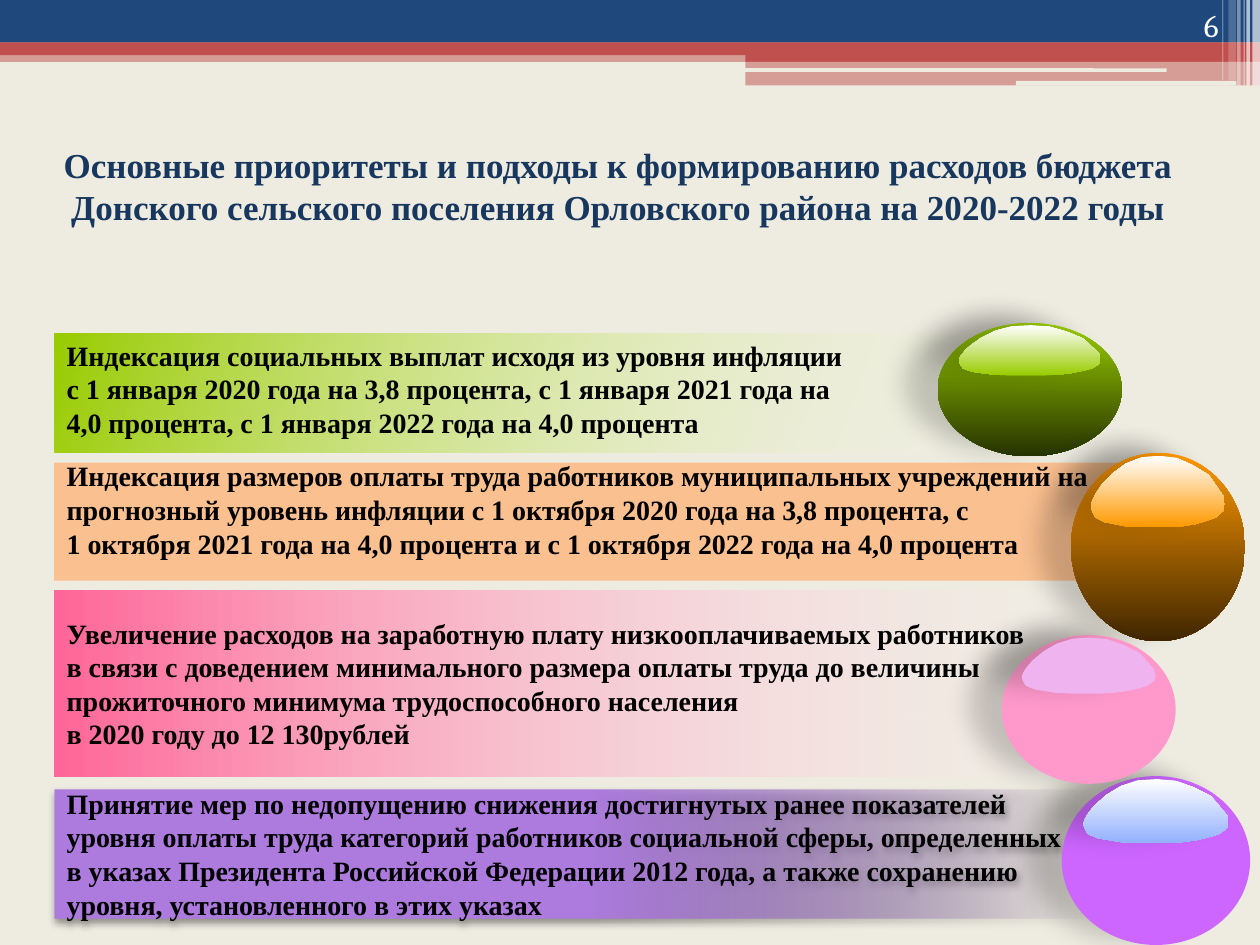
from dataclasses import dataclass
from typing import Optional

from lxml import etree
from pptx import Presentation
from pptx.dml.color import RGBColor
from pptx.enum.shapes import MSO_SHAPE
from pptx.enum.text import MSO_ANCHOR, MSO_AUTO_SIZE, PP_ALIGN
from pptx.oxml.ns import qn
from pptx.util import Pt

RECT, ROUND, OVAL = MSO_SHAPE.RECTANGLE, MSO_SHAPE.ROUNDED_RECTANGLE, MSO_SHAPE.OVAL
LEFT, CENTER, RIGHT = PP_ALIGN.LEFT, PP_ALIGN.CENTER, PP_ALIGN.RIGHT
TOP, MIDDLE, BOTTOM = MSO_ANCHOR.TOP, MSO_ANCHOR.MIDDLE, MSO_ANCHOR.BOTTOM
FIT, FIXED = MSO_AUTO_SIZE.SHAPE_TO_FIT_TEXT, MSO_AUTO_SIZE.NONE
SERIF = "Times New Roman"
NAVY, RED, CREAM, WHITE, BLACK = "1F497D", "C0504D", "EEECE1", "FFFFFF", "000000"
GLOSS = [
    (.99, .57), (1, .68), (.99, .77), (.94, .86), (.87, .91), (.78, .96), (.68, .99),
    (.6, 1), (.36, 1), (.26, .99), (.18, .96), (.1, .93), (.03, .86), (.01, .78),
    (0, .71), (.01, .63), (.04, .52), (.08, .41), (.16, .25), (.26, .11), (.38, .02),
    (.51, 0), (.64, .03), (.76, .13), (.88, .27), (.95, .46),
]


@dataclass
class Box:
    x: float
    y: float
    w: float
    h: float


@dataclass
class Stop:
    pos: int
    color: str
    alpha: int = 100


@dataclass
class Fill:
    stops: list[Stop]
    angle: float = 0


@dataclass
class Shadow:
    alpha: int
    blur: float
    dist: float
    angle: int


@dataclass
class Ball:
    box: Box
    fill: Fill
    gloss: Fill


@dataclass
class Style:
    size: int = 16
    color: str = BLACK
    font: str = SERIF
    bold: bool = True
    align: PP_ALIGN = LEFT
    anchor: MSO_ANCHOR = TOP
    top: float = 3.6
    grow: bool = False


def rgb(color: str) -> RGBColor:
    """Turn a hex string into a colour."""
    return RGBColor.from_string(color)


def solid(color: str, alpha: int = 100) -> Fill:
    """Describe a plain fill."""
    return Fill([Stop(0, color, alpha)])


def fade(first: str, last: str, angle: float = 90, alpha: int = 100) -> Fill:
    """Describe a two-colour gradient whose first colour may be transparent."""
    return Fill([Stop(0, first, alpha), Stop(100, last)], angle)


def add_color(parent, color: str, alpha: int) -> None:
    """Append a colour element with its opacity."""
    clr = etree.SubElement(parent, qn("a:srgbClr"), val=color)
    if alpha < 100:
        etree.SubElement(clr, qn("a:alpha"), val=str(alpha * 1000))


def paint(sp, fill: Fill, shadow: Optional[Shadow] = None) -> None:
    """Set fill and shadow and remove the line."""
    sp.line.fill.background()
    sp.shadow.inherit = False
    sp_pr = sp._element.spPr
    if len(fill.stops) == 1:
        sp.fill.solid()
        node = sp_pr.find(qn("a:solidFill"))
        node.clear()
        add_color(node, fill.stops[0].color, fill.stops[0].alpha)
    else:
        sp.fill.gradient()
        sp.fill.gradient_angle = (360 - fill.angle) % 360
        node = sp_pr.find(qn("a:gradFill")).find(qn("a:gsLst"))
        node.clear()
        for stop in fill.stops:
            gs = etree.SubElement(node, qn("a:gs"), pos=str(stop.pos * 1000))
            add_color(gs, stop.color, stop.alpha)
    if shadow:
        node = etree.SubElement(
            sp_pr.find(qn("a:effectLst")), qn("a:outerShdw"),
            blurRad=str(Pt(shadow.blur)), dist=str(Pt(shadow.dist)),
            dir=str(shadow.angle * 60000), algn="ctr", rotWithShape="0")
        add_color(node, BLACK, shadow.alpha)


def add_shape(s, kind: MSO_SHAPE, box: Box, fill: Fill, shadow: Optional[Shadow] = None):
    """Draw a preset shape."""
    sp = s.shapes.add_shape(kind, Pt(box.x), Pt(box.y), Pt(box.w), Pt(box.h))
    paint(sp, fill, shadow)
    return sp


def write(sp, lines: list[str], style: Style) -> None:
    """Write one paragraph per item, with a line break at each newline."""
    tf = sp.text_frame
    tf.word_wrap = True
    tf.auto_size = FIT if style.grow else FIXED
    tf.vertical_anchor = style.anchor
    tf.margin_top = Pt(style.top)
    for i, line in enumerate(lines):
        p = tf.add_paragraph() if i else tf.paragraphs[0]
        p.alignment = style.align
        for j, part in enumerate(line.split("\n")):
            if j:
                p.add_line_break()
            r = p.add_run()
            r.text = part
            r.font.name, r.font.size, r.font.bold = style.font, Pt(style.size), style.bold
            r.font.color.rgb = rgb(style.color)


def add_text(s, box: Box, lines: list[str], style: Style) -> None:
    """Place a text box."""
    write(s.shapes.add_textbox(Pt(box.x), Pt(box.y), Pt(box.w), Pt(box.h)), lines, style)


def add_ball(s, ball: Ball) -> None:
    """Draw a glossy ball with its highlight."""
    shadow = Shadow(18, 14.5, 19, 192)
    b = ball.box
    add_shape(s, OVAL, b, ball.fill, shadow)
    x, y, w, h = b.x + b.w * .115, b.y + b.h * .017, b.w * .77, b.h * .377
    points = [(Pt(x + u * w), Pt(y + v * h)) for u, v in GLOSS]
    fb = s.shapes.build_freeform(*points[0])
    fb.add_line_segments(points[1:], close=True)
    paint(fb.convert_to_shape(), ball.gloss, shadow)


def add_header(s) -> None:
    """Draw the banded header and its vertical strips."""
    half = solid(RED, 50)
    for box, fill in [
        (Box(0, 28.8, 720, 6.6), half), (Box(0, 0, 720, 24.4), solid(NAVY)),
        (Box(0, 24.3, 720, 7.2), solid(RED)), (Box(426, 28, 294, 7.2), solid(RED)),
        (Box(426, 34.6, 294, 14.2), half),
    ]:
        add_shape(s, RECT, box, fill)
    for box in (Box(425.5, 39, 241.2, 2), Box(580.5, 46.2, 126, 2.7)):
        add_shape(s, ROUND, box, solid(CREAM))
    for x, w, h, alpha in [(715.7, 4.3, 49, 65), (712.2, 2, 49, 65), (710.6, .7, 49, 60),
                           (707, 2, 49, 40), (702, 4.3, 46, 20), (698.4, .7, 46, 30)]:
        add_shape(s, RECT, Box(x, 0, w, h), solid(WHITE, alpha))


def main() -> None:
    """Build the slide and save it."""
    prs = Presentation()
    prs.slide_width, prs.slide_height = Pt(720), Pt(540)
    s = prs.slides.add_slide(prs.slide_layouts[6])
    s.background.fill.solid()
    s.background.fill.fore_color.rgb = rgb(CREAM)
    add_header(s)
    add_shape(s, RECT, Box(31, 264.3, 612, 67.5), solid("FAC090"))
    add_text(s, Box(20.2, 78.7, 666, 55.7), [
        "Основные приоритеты и подходы к формированию расходов бюджета "
        "Донского сельского поселения Орловского района на 2020-2022 годы",
    ], Style(20, "17375E", align=CENTER, grow=True))
    add_shape(s, RECT, Box(31, 190.5, 590, 68), fade(WHITE, "99CC00", 200, 0))
    add_ball(s, Ball(Box(535.8, 184.5, 105.2, 76.2), fade("99CC00", "263300"), fade(WHITE, "99CC00")))
    add_text(s, Box(31, 190.5, 521.3, 65), [
        "Индексация социальных выплат исходя из уровня инфляции",
        "с 1 января 2020 года на 3,8 процента, с 1 января 2021 года на",
        "4,0 процента, с 1 января 2022 года на 4,0 процента",
    ], Style(top=2.9, grow=True))
    sp = add_shape(s, RECT, Box(31, 337.4, 654.5, 106.3), fade(WHITE, "FF6699", 180, 0))
    write(sp, [
        "Увеличение расходов на заработную плату низкооплачиваемых работников",
        "в связи с доведением минимального размера оплаты труда до величины",
        "прожиточного минимума трудоспособного населения",
        "в 2020 году до 12 130рублей",
    ], Style(anchor=MIDDLE))
    add_text(s, Box(643.7, 0, 59.8, 28.8), ["6"],
             Style(18, WHITE, "Cambria", False, RIGHT, BOTTOM))
    violet = Fill([Stop(50, "AC7BDD"), Stop(97, "79569C", 0), Stop(100, "CC99FF", 0)])
    sp = add_shape(s, RECT, Box(31, 451.2, 612, 73.8), violet, Shadow(40, 4.1, 2, 90))
    write(sp, [
        "Принятие мер по недопущению снижения достигнутых ранее показателей",
        "уровня оплаты труда категорий работников социальной сферы, определенных",
        "в указах Президента Российской Федерации 2012 года, а также сохранению "
        "уровня, установленного в этих указах",
    ], Style(anchor=MIDDLE, top=2.9))
    add_ball(s, Ball(Box(606.7, 443.5, 107.7, 96.5), solid("CC66FF"), fade(WHITE, "93B1FD")))
    add_text(s, Box(31, 258.7, 612, 65.5), [
        "Индексация размеров оплаты труда работников муниципальных учреждений на "
        "прогнозный уровень инфляции с 1 октября 2020 года на 3,8 процента, с\n"
        "1 октября 2021 года на 4,0 процента и с 1 октября 2022 года на 4,0 процента",
    ], Style(grow=True))
    add_ball(s, Ball(Box(612, 258.7, 99.4, 107.7), fade("FF9900", "402600"), fade(WHITE, "FF9900")))
    add_ball(s, Ball(Box(572.4, 362.9, 99.4, 85), solid("FF99CC"), solid("EFB3F0")))
    prs.save("out.pptx")


if __name__ == "__main__":
    main()
